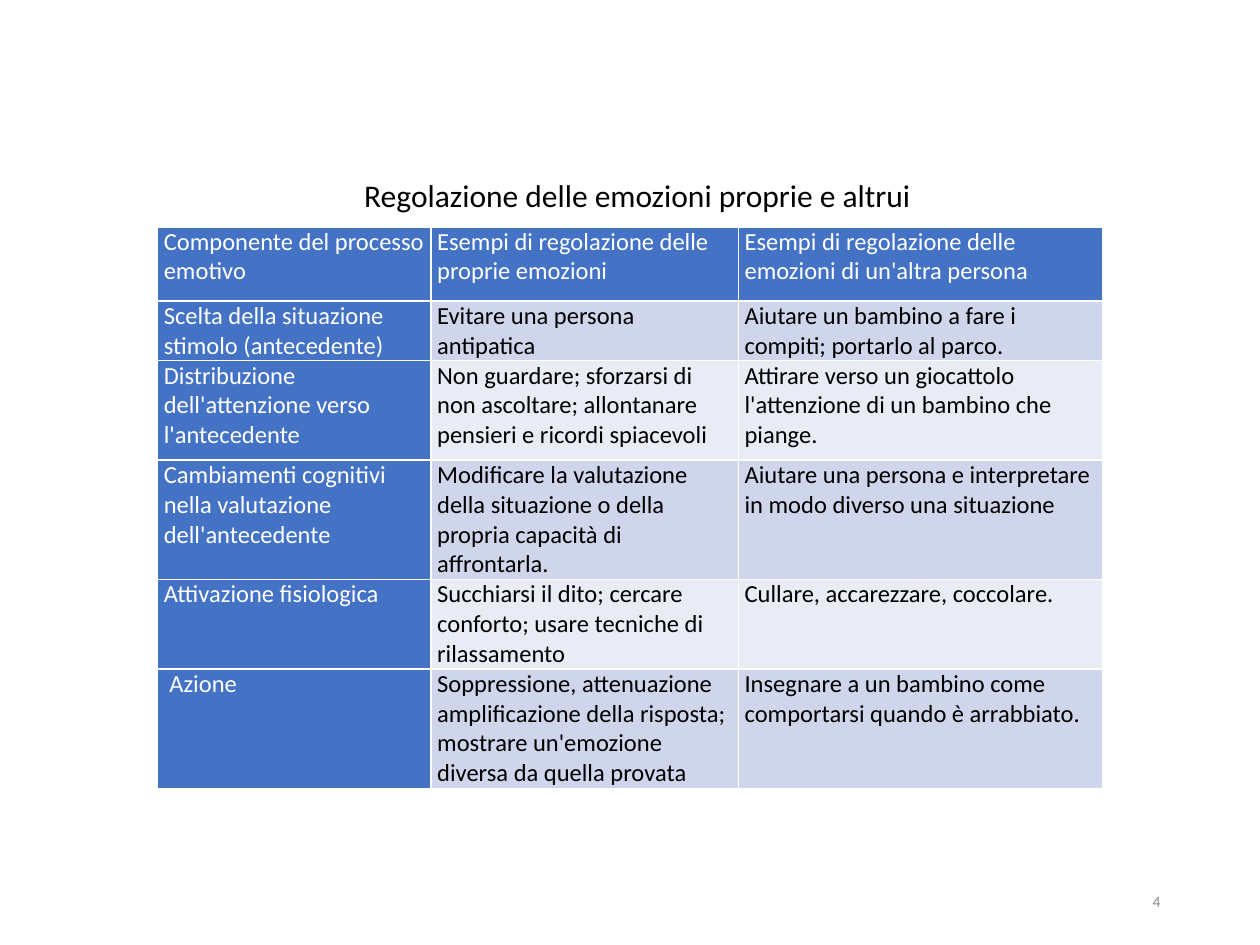
from pptx import Presentation
from pptx.dml.color import RGBColor
from pptx.enum.text import MSO_ANCHOR, MSO_AUTO_SIZE, PP_ALIGN as Align
from pptx.util import Inches, Pt

FONT = "Calibri"
COLORS = {
    "text": "000000",
    "inverse": "FFFFFF",
    "muted": "8C8C8C",
    "heading": "4472C4",
    "odd": "CFD5EA",
    "even": "E9EBF5",
}
WIDTH, HEIGHT = Inches(10), Inches(7.5)

# Boxes as shares of the slide: left, top, width, height
TITLE_BOX = (0.27, 0.18, 0.472, 0.053)
TABLE_BOX = (0.125, 0.24, 0.75, 0.545)
NUMBER_BOX = (0.706, 0.927, 0.225, 0.053)

# Relative column widths and row heights
COLUMNS = [2.17, 2.44, 2.89]
ROWS = [0.59, 0.45, 0.79, 0.68, 0.68, 0.9]

CELLS = [
    ["Componente del processo emotivo",
     "Esempi di regolazione delle proprie emozioni",
     "Esempi di regolazione delle emozioni di un'altra persona"],
    ["Scelta della situazione stimolo (antecedente)",
     "Evitare una persona antipatica",
     "Aiutare un bambino a fare i compiti; portarlo al parco."],
    ["Distribuzione dell'attenzione verso l'antecedente",
     "Non guardare; sforzarsi di non ascoltare; allontanare pensieri e ricordi spiacevoli",
     "Attirare verso un giocattolo l'attenzione di un bambino che piange."],
    ["Cambiamenti cognitivi nella valutazione dell'antecedente",
     "Modificare la valutazione della situazione o della propria capacità di affrontarla.",
     "Aiutare una persona e interpretare in modo diverso una situazione"],
    ["Attivazione fisiologica",
     "Succhiarsi il dito; cercare conforto; usare tecniche di rilassamento",
     "Cullare, accarezzare, coccolare."],
    [" Azione",
     "Soppressione, attenuazione amplificazione della risposta; "
     "mostrare un'emozione diversa da quella provata",
     "Insegnare a un bambino come comportarsi quando è arrabbiato."],
]


def place(box):
    left, top, width, height = box
    return (int(left * WIDTH), int(top * HEIGHT),
            int(width * WIDTH), int(height * HEIGHT))


def rgb(name):
    return RGBColor.from_string(COLORS[name])


def style(p, size, color):
    p.font.name = FONT
    p.font.size = Pt(size)
    p.font.bold = False
    p.font.color.rgb = rgb(color)


def add_text(s, box, text, size, color, align, anchor=MSO_ANCHOR.TOP):
    tf = s.shapes.add_textbox(*place(box)).text_frame
    tf.word_wrap = True
    tf.auto_size = MSO_AUTO_SIZE.NONE
    tf.vertical_anchor = anchor
    p = tf.paragraphs[0]
    p.text = text
    p.alignment = align
    style(p, size, color)


def fill_cell(cell, text, fill, color):
    cell.margin_left = cell.margin_right = Inches(0.05)
    cell.margin_top = cell.margin_bottom = 0
    cell.fill.solid()
    cell.fill.fore_color.rgb = rgb(fill)
    cell.text = text
    style(cell.text_frame.paragraphs[0], 14, color)


def add_emotion_table(s, box):
    left, top, width, height = place(box)
    table = s.shapes.add_table(len(ROWS), len(COLUMNS), left, top, width, height).table
    table.first_col = True
    for column, share in zip(table.columns, COLUMNS):
        column.width = int(width * share / sum(COLUMNS))
    for row, share in zip(table.rows, ROWS):
        row.height = int(height * share / sum(ROWS))

    # Headings on the top and left, alternating bands elsewhere
    for i, texts in enumerate(CELLS):
        for j, text in enumerate(texts):
            if i == 0 or j == 0:
                fill, color = "heading", "inverse"
            else:
                fill, color = ("odd" if i % 2 else "even"), "text"
            fill_cell(table.cell(i, j), text, fill, color)


def main():
    prs = Presentation()
    prs.slide_width, prs.slide_height = WIDTH, HEIGHT
    s = prs.slides.add_slide(prs.slide_layouts[6])

    # Slide number, table and its title
    add_text(s, NUMBER_BOX, "4", 9, "muted", Align.RIGHT, MSO_ANCHOR.MIDDLE)
    add_emotion_table(s, TABLE_BOX)
    add_text(s, TITLE_BOX, "Regolazione delle emozioni proprie e altrui",
             18, "text", Align.CENTER)

    prs.save("out.pptx")


if __name__ == "__main__":
    main()
